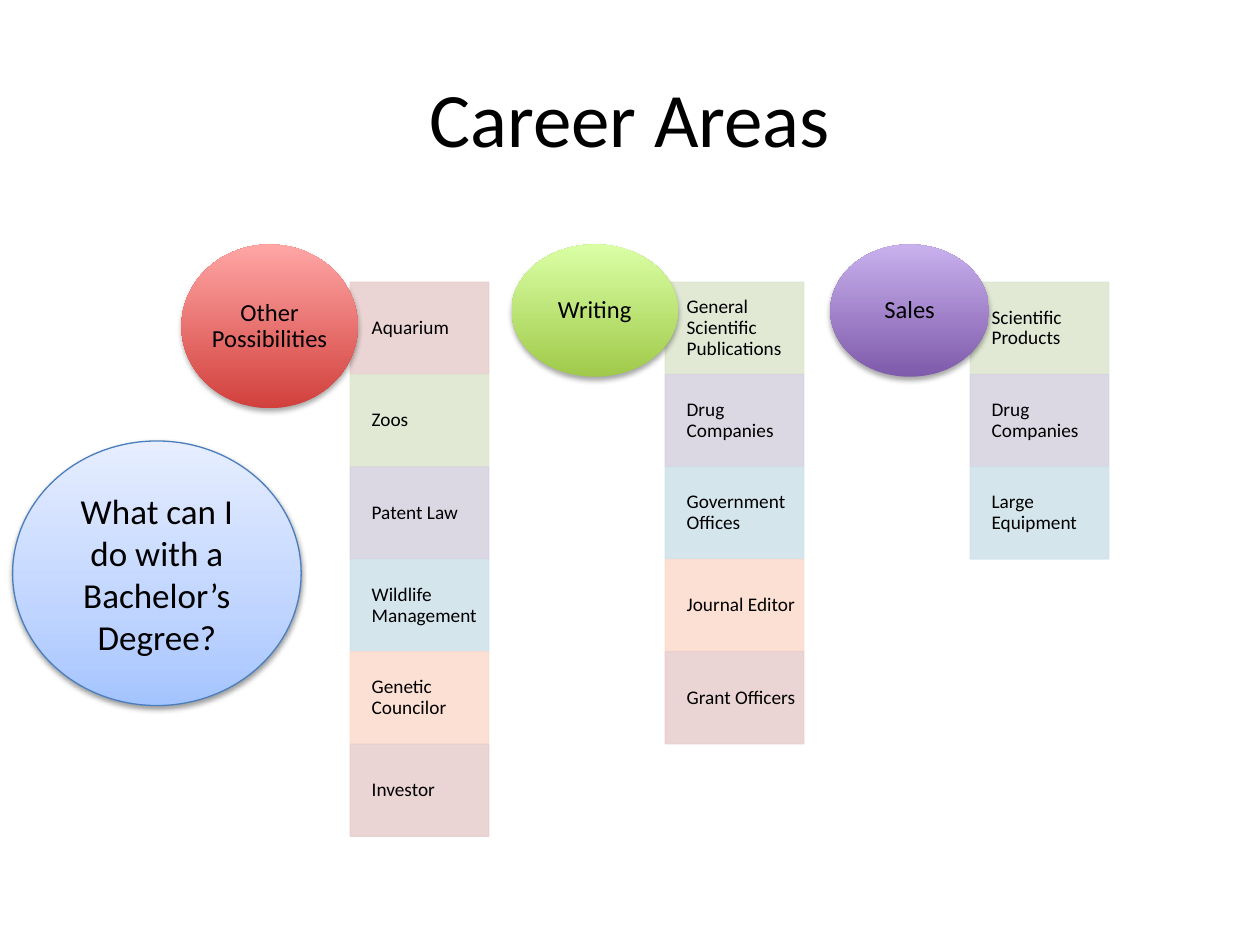
"""Build the Career Areas slide: a question, three named ovals and their jobs."""
from pptx import Presentation
from pptx.util import Inches, Pt
from pptx.dml.color import RGBColor as RGB
from pptx.enum.shapes import MSO_SHAPE as Kind
from pptx.enum.text import PP_ALIGN as Align, MSO_ANCHOR as Anchor
from pptx.oxml.ns import qn
from lxml.etree import SubElement as Sub

TITLE = "Career Areas"
ASK = "What can I do with a Bachelor’s Degree?"
AREAS = [
    {"name": "Other Possibilities", "oval": (1.44, 1.4, 1.3), "left": 2.78,
     "fade": "red", "tint": 0,
     "jobs": ["Aquarium", "Zoos", "Patent Law", "Wildlife Management",
              "Genetic Councilor", "Investor"]},
    {"name": "Writing", "oval": (4.06, 1.32, 1.05), "left": 5.28,
     "fade": "green", "tint": 1,
     "jobs": ["General Scientific Publications", "Drug Companies",
              "Government Offices", "Journal Editor", "Grant Officers"]},
    {"name": "Sales", "oval": (6.59, 1.26, 1.05), "left": 7.7,
     "fade": "violet", "tint": 1,
     "jobs": ["Scientific Products", "Drug Companies", "Large Equipment"]},
]
THEME = {
    "font": "Calibri", "ink": "000000", "edge": "4B7EBC",
    "title": 44, "ask": 20, "area": 14, "job": 11,
    "tints": ["E8D0D0", "DEE7D1", "D8D3E0", "D0E3EA", "FCDDCF"],
    "fades": {
        "blue": [(0, "A4C4FF"), (35, "BFD4FF"), (100, "E6EEFF")],
        "red": [(0, "D1403C"), (100, "FFA6A5")],
        "green": [(0, "A0CA4A"), (100, "DAFFA5")],
        "violet": [(0, "7F5BAB"), (100, "C8B0ED")],
    },
}
OVAL_TOP, CELL_TOP, CELL_END = 1.94, 2.24, 6.64
CELL_W, CELL_H = 1.1, 0.73
STEP = (CELL_END - CELL_TOP) / 6
PADS = (0.1, 0.05, 0.1, 0.05)
CELL_PADS = (0.17, 0.09, 0.04, 0.09)


def write(shape, text, size, pads, align=Align.CENTER, gap=None):
    frame = shape.text_frame
    frame.word_wrap = True
    frame.vertical_anchor = Anchor.MIDDLE
    (frame.margin_left, frame.margin_top,
     frame.margin_right, frame.margin_bottom) = map(Inches, pads)
    para = frame.paragraphs[0]
    para.alignment = align
    para.line_spacing = gap
    run = para.add_run()
    run.text = text
    run.font.name = THEME["font"]
    run.font.size = Pt(THEME[size])
    run.font.color.rgb = RGB.from_string(THEME["ink"])


def add(slide, kind, box):
    shape = slide.shapes.add_shape(kind, *map(Inches, box))
    shape.shadow.inherit = False
    return shape


def fade(shape, stops):
    shape.fill.gradient()
    shape.fill.gradient_angle = 90
    row = shape._element.spPr.find(".//" + qn("a:gsLst"))
    row.clear()
    for pos, tone in stops:
        stop = Sub(row, qn("a:gs"), pos=str(pos * 1000))
        Sub(stop, qn("a:srgbClr"), val=tone)


def shade(shape, dist, alpha):
    out = Sub(shape._element.spPr.find(qn("a:effectLst")), qn("a:outerShdw"),
              blurRad=str(Pt(3.1)), dist=str(Pt(dist)), dir="5400000",
              rotWithShape="0")
    tone = Sub(out, qn("a:srgbClr"), val="000000")
    Sub(tone, qn("a:alpha"), val=str(alpha * 1000))


def add_cell(slide, box, text, tint):
    cell = add(slide, Kind.RECTANGLE, box)
    cell.line.width = Pt(0.75)
    for fill in (cell.fill, cell.line.fill):
        fill.solid()
        fill.fore_color.rgb = RGB.from_string(tint)
    for tone in cell._element.spPr.iter(qn("a:srgbClr")):
        Sub(tone, qn("a:alpha"), val="90000")
    write(cell, text, "job", CELL_PADS, Align.LEFT, 0.9)


def add_area(slide, area):
    tints = THEME["tints"]
    for i, job in enumerate(area["jobs"]):
        box = (area["left"], CELL_TOP + i * STEP, CELL_W, CELL_H)
        add_cell(slide, box, job, tints[(area["tint"] + i) % len(tints)])
    left, wide, high = area["oval"]
    oval = add(slide, Kind.OVAL, (left, OVAL_TOP, wide, high))
    fade(oval, THEME["fades"][area["fade"]])
    oval.line.fill.background()
    shade(oval, 1.8, 35)
    write(oval, area["name"], "area", (0, 0, 0, 0), gap=0.9)


def main():
    deck = Presentation()
    deck.slide_width, deck.slide_height = Inches(10), Inches(7.5)
    slide = deck.slides.add_slide(deck.slide_layouts[6])

    ask = add(slide, Kind.OVAL, (0.1, 3.5, 2.29, 2.1))
    fade(ask, THEME["fades"]["blue"])
    ask.line.color.rgb = RGB.from_string(THEME["edge"])
    ask.line.width = Pt(0.75)
    shade(ask, 1.6, 38)
    write(ask, ASK, "ask", PADS)

    head = slide.shapes.add_textbox(*map(Inches, (0.5, 0.3, 9, 1.25)))
    write(head, TITLE, "title", PADS)

    for area in AREAS:
        add_area(slide, area)
    deck.save("out.pptx")


if __name__ == "__main__":
    main()
